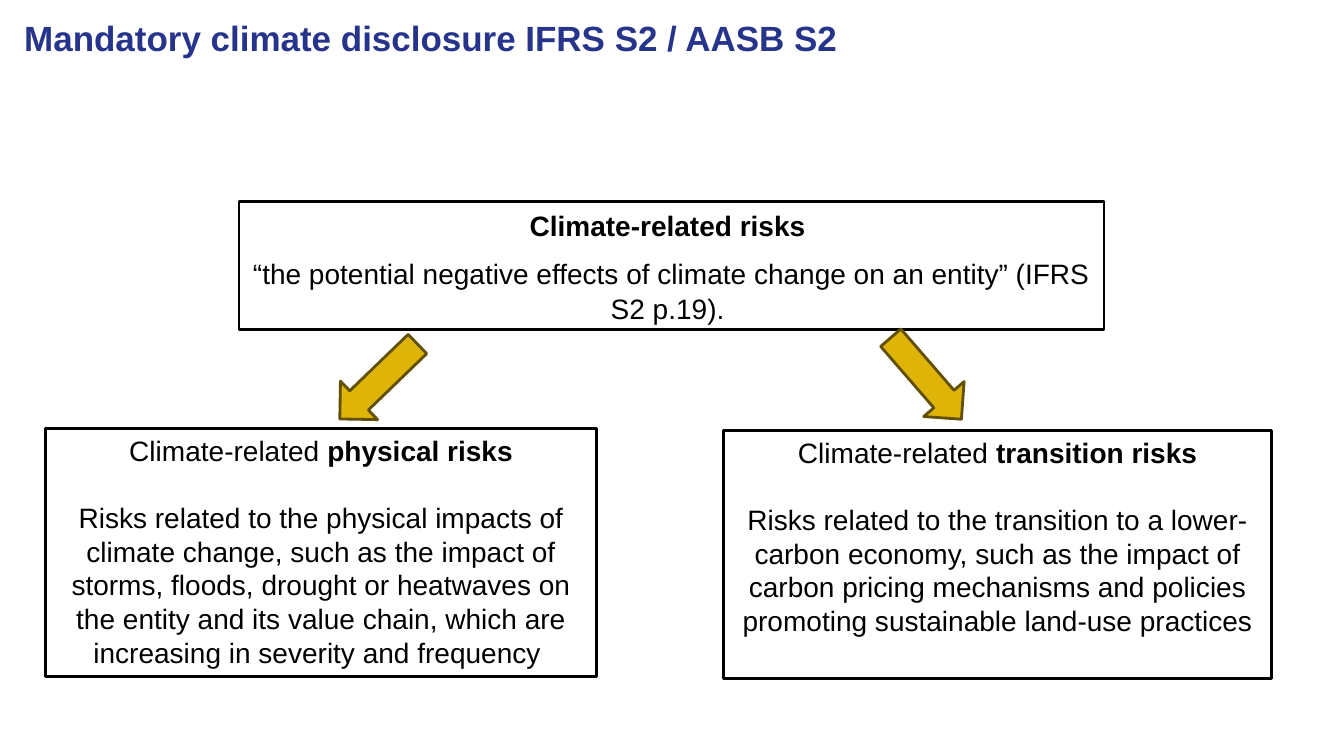
from pptx import Presentation
from pptx.dml.color import RGBColor
from pptx.enum.shapes import MSO_SHAPE
from pptx.enum.text import MSO_ANCHOR, PP_ALIGN
from pptx.util import Pt

PX = 9144  # 100 px to the inch
RECTANGLE, ARROW = MSO_SHAPE.RECTANGLE, MSO_SHAPE.RIGHT_ARROW
TOP, LEFT, CENTER = MSO_ANCHOR.TOP, PP_ALIGN.LEFT, PP_ALIGN.CENTER
COLORS = {
    name: RGBColor.from_string(value)
    for name, value in {
        "title": "27348B", "black": "000000", "white": "FFFFFF",
        "gold": "DEB408", "brown": "614F04",
    }.items()
}


def add_outlined(kind, place, fill, line):
    shape = slide.shapes.add_shape(kind, *[value * PX for value in place])
    shape.shadow.inherit = False
    shape.fill.solid()
    shape.fill.fore_color.rgb = COLORS[fill]
    shape.line.color.rgb = COLORS[line]
    shape.line.width = Pt(2)
    return shape


def style_paragraph(paragraph, size, color, alignment):
    paragraph.alignment = alignment
    paragraph.font.name = "Arial"
    paragraph.font.size = Pt(size)
    paragraph.font.color.rgb = COLORS[color]


presentation = Presentation()
presentation.slide_width = 1333 * PX
presentation.slide_height = 750 * PX
slide = presentation.slides.add_slide(presentation.slide_layouts[5])

# Title
title = slide.shapes.title
title.left, title.top, title.width, title.height = [
    value * PX for value in (14, 11, 975, 89)
]
title.text_frame.text = "Mandatory climate disclosure IFRS S2 / AASB S2"
title.text_frame.vertical_anchor = TOP
style_paragraph(title.text_frame.paragraphs[0], 25, "title", LEFT)
title.text_frame.paragraphs[0].font.bold = True

# Risk boxes: place, plain and bold heading, body, gap, line spacing
risk_boxes = [
    ((237, 200, 858, 127), "", "Climate-related risks ",
     "“the potential negative effects of climate change on an entity” "
     "(IFRS S2 p.19). ", 8, 1.07),
    ((45, 425, 547, 246), "Climate-related ", "physical risks",
     "Risks related to the physical impacts of climate change, such as the "
     "impact of storms, floods, drought or heatwaves on the entity and its "
     "value chain, which are increasing in severity and frequency ", 24, 1.0),
    ((718, 427, 543, 246), "Climate-related ", "transition risks",
     "Risks related to the transition to a lower-carbon economy, such as the "
     "impact of carbon pricing mechanisms and policies promoting sustainable "
     "land-use practices", 24, 1.0),
]
for place, plain, bold, body, gap, spacing in risk_boxes:
    frame = add_outlined(RECTANGLE, place, "white", "black").text_frame
    frame.word_wrap = True
    frame.vertical_anchor = TOP
    heading, description = frame.paragraphs[0], frame.add_paragraph()
    if plain:
        heading.add_run().text = plain
    bold_run = heading.add_run()
    bold_run.text = bold
    bold_run.font.bold = True
    description.text = body
    description.space_before = Pt(gap)
    for paragraph in (heading, description):
        paragraph.line_spacing = spacing
        style_paragraph(paragraph, 20, "black", CENTER)

# Arrows from the overall risk to its two kinds
for left, top, angle in [(322, 352, 136), (865, 349, 49.1)]:
    arrow = add_outlined(ARROW, (left, top, 107, 53), "gold", "brown")
    arrow.rotation = angle

presentation.save("out.pptx")
